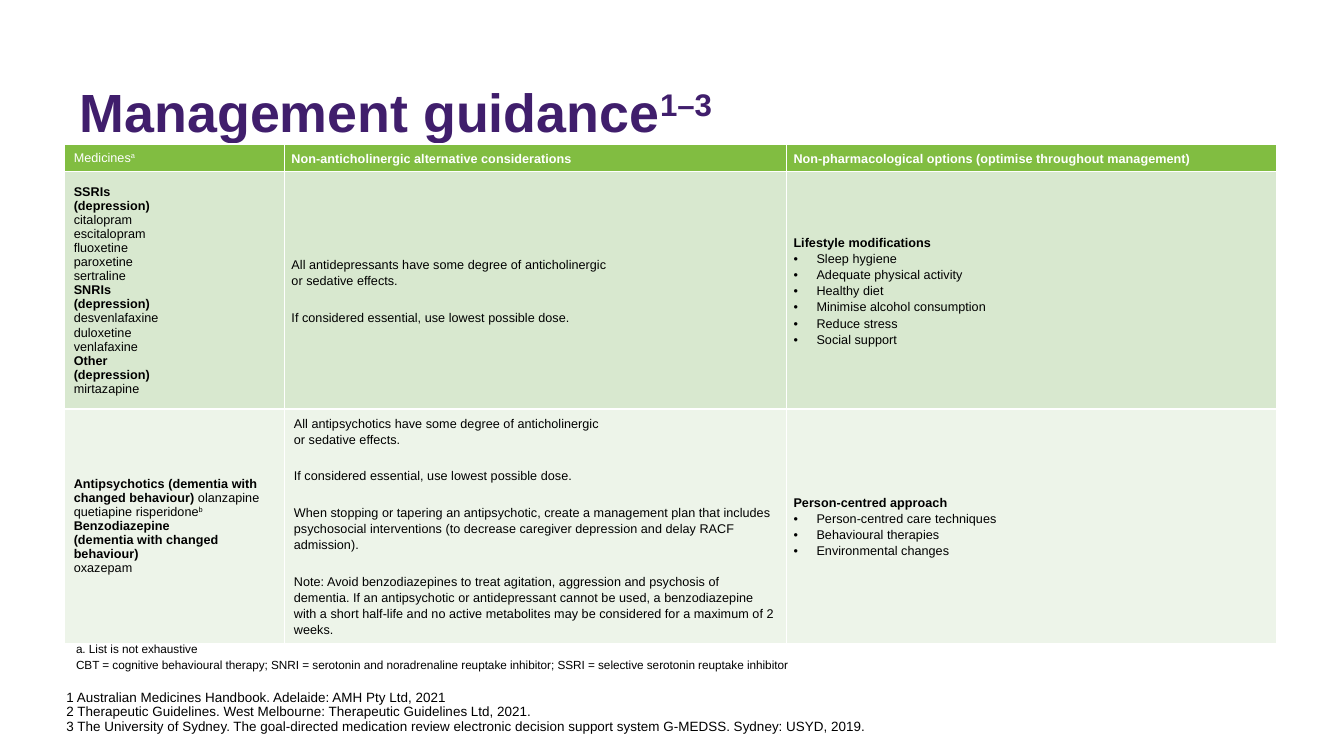
from dataclasses import dataclass

from lxml import etree
from pptx import Presentation
from pptx import util as u
from pptx.dml.color import RGBColor
from pptx.enum import text
from pptx.oxml.ns import qn


@dataclass(frozen=True)
class Theme:
    font: str = "Arial"
    purple: str = "401E6C"
    black: str = "000000"
    white: str = "FFFFFF"
    header_fill: str = "81BD41"
    row_fills: tuple = ("D8E8CF", "EDF4E9")
    title_size: float = 32
    reference_size: float = 8
    table_size: float = 7.5
    note_size: float = 7


THEME = Theme()
BOLD, SUPER = "bold", "super"
WIDE, NARROW, FLUSH = (0.08, 0.04), (0.06, 0), (0.08, 0)

COLUMN_WIDTHS = (1.82, 4.15, 4.05)
ROW_HEIGHTS = (0.23, 1.96, 1.92)

# A paragraph is plain text or a list of (text, style, ...) spans.
HEADERS = (
    [("Medicines",), ("a", SUPER)],
    [("Non-anticholinergic alternative considerations", BOLD)],
    [("Non-pharmacological options (optimise throughout management)", BOLD)],
)
DEPRESSION = {
    "SSRIs": ("citalopram", "escitalopram", "fluoxetine", "paroxetine", "sertraline"),
    "SNRIs": ("desvenlafaxine", "duloxetine", "venlafaxine"),
    "Other": ("mirtazapine",),
}
DEMENTIA_MEDICINES = (
    [("Antipsychotics (dementia with changed behaviour) ", BOLD),
     ("olanzapine quetiapine risperidone",), ("b", SUPER)],
    [("Benzodiazepine", BOLD)],
    [("(dementia with changed behaviour)", BOLD)],
    "oxazepam",
)
LOWEST_DOSE = "If considered essential, use lowest possible dose."
ANTIDEPRESSANT_ADVICE = (
    "All antidepressants have some degree of anticholinergic\vor sedative effects.",
    LOWEST_DOSE,
)
ANTIPSYCHOTIC_ADVICE = (
    "All antipsychotics have some degree of anticholinergic\vor sedative effects.",
    LOWEST_DOSE,
    "When stopping or tapering an antipsychotic, create a management plan that includes "
    "psychosocial interventions (to decrease caregiver depression and delay RACF admission).",
    "Note: Avoid benzodiazepines to treat agitation, aggression and psychosis of dementia. "
    "If an antipsychotic or antidepressant cannot be used, a benzodiazepine with a short "
    "half-life and no active metabolites may be considered for a maximum of 2 weeks.",
)
LIFESTYLE = ("Lifestyle modifications", "Sleep hygiene", "Adequate physical activity",
             "Healthy diet", "Minimise alcohol consumption", "Reduce stress", "Social support")
PERSON_CENTRED = ("Person-centred approach", "Person-centred care techniques",
                  "Behavioural therapies", "Environmental changes")
NOTES = (
    "a. List is not exhaustive",
    "CBT = cognitive behavioural therapy; SNRI = serotonin and noradrenaline reuptake "
    "inhibitor; SSRI = selective serotonin reuptake inhibitor",
)
REFERENCES = (
    "1 Australian Medicines Handbook. Adelaide: AMH Pty Ltd, 2021",
    "2 Therapeutic Guidelines. West Melbourne: Therapeutic Guidelines Ltd, 2021.",
    "3 The University of Sydney. The goal-directed medication review electronic decision "
    "support system G-MEDSS. Sydney: USYD, 2019.",
)


def add_bullet(para):
    properties = para._p.get_or_add_pPr()
    properties.set("marL", str(u.Inches(0.19)))
    properties.set("indent", str(-u.Inches(0.19)))
    etree.SubElement(properties, qn("a:buFont")).set("typeface", THEME.font)
    etree.SubElement(properties, qn("a:buChar")).set("char", "•")


def write_paragraph(para, content, size, color):
    spans = [(content,)] if isinstance(content, str) else content
    para.text = spans[0][0] if len(spans) == 1 else ""
    if len(spans) > 1:
        for span in spans:
            para.add_run().text = span[0]
    for index, run in enumerate(para.runs):
        styles = spans[min(index, len(spans) - 1)][1:]
        run.font.name = THEME.font
        run.font.size = u.Pt(size)
        run.font.bold = BOLD in styles
        run.font.color.rgb = RGBColor.from_string(color)
        if SUPER in styles:
            run.font._element.set("baseline", "30000")
    for line_break in para._p.findall(qn("a:br")):
        etree.SubElement(line_break, qn("a:rPr")).set("sz", str(int(size * 100)))


def write_paragraphs(frame, contents, size, color, line=1.0, gap=0, bulleted=False):
    """Fill a frame; gap falls between paragraphs only, bullets start at the second."""
    last = len(contents) - 1
    for index, content in enumerate(contents):
        para = frame.add_paragraph() if index else frame.paragraphs[0]
        para.alignment = text.PP_ALIGN.LEFT
        para.line_spacing = line
        para.space_before = u.Pt(gap if index else 0)
        para.space_after = u.Pt(gap if index < last else 0)
        if bulleted and index:
            add_bullet(para)
        write_paragraph(para, content, size, color)


def add_title(slide):
    title = slide.shapes.title
    title.left, title.top = u.Inches(0.56), u.Inches(0.25)
    title.width, title.height = u.Inches(8.82), u.Inches(0.99)
    frame = title.text_frame
    frame.auto_size = text.MSO_AUTO_SIZE.NONE
    frame.vertical_anchor = text.MSO_ANCHOR.BOTTOM
    heading = [("Management guidance", BOLD), ("1–3", BOLD, SUPER)]
    write_paragraphs(frame, [heading], THEME.title_size, THEME.purple, line=0.9)


def add_text(slide, left, top, width, height, contents, size, line):
    box = slide.shapes.add_textbox(*map(u.Inches, (left, top, width, height)))
    box.text_frame.word_wrap = True
    write_paragraphs(box.text_frame, contents, size, THEME.black, line)
    return box.text_frame


def add_borders(cell):
    properties = cell._tc.get_or_add_tcPr()
    for index, side in enumerate(("lnL", "lnR", "lnT", "lnB")):
        border = etree.Element(qn(f"a:{side}"), w=str(u.Pt(1)))
        fill = etree.SubElement(border, qn("a:solidFill"))
        etree.SubElement(fill, qn("a:srgbClr")).set("val", THEME.white)
        properties.insert(index, border)


def fill_cell(cell, contents, fill, margins, color=THEME.black, **spacing):
    side, edge = map(u.Inches, margins)
    cell.margin_left = cell.margin_right = side
    cell.margin_top = cell.margin_bottom = edge
    cell.vertical_anchor = text.MSO_ANCHOR.MIDDLE
    cell.fill.solid()
    cell.fill.fore_color.rgb = RGBColor.from_string(fill)
    add_borders(cell)
    write_paragraphs(cell.text_frame, contents, THEME.table_size, color, **spacing)


def depression_medicines():
    lines = []
    for group, medicines in DEPRESSION.items():
        lines += [[(group, BOLD)], [("(depression)", BOLD)], *medicines]
    return lines


def add_guidance_table(slide):
    frame = slide.shapes.add_table(
        len(ROW_HEIGHTS), len(COLUMN_WIDTHS), u.Inches(0.53), u.Inches(1.19),
        u.Inches(sum(COLUMN_WIDTHS)), u.Inches(sum(ROW_HEIGHTS)))
    table = frame.table
    for column, width in zip(table.columns, COLUMN_WIDTHS):
        column.width = u.Inches(width)
    for row, height in zip(table.rows, ROW_HEIGHTS):
        row.height = u.Inches(height)

    for column, header in enumerate(HEADERS):
        fill_cell(table.cell(0, column), [header], THEME.header_fill,
                  NARROW if column else WIDE, THEME.white, line=1.15 if column else 1.0)

    rows = (
        (depression_medicines(), ANTIDEPRESSANT_ADVICE, NARROW, LIFESTYLE),
        (DEMENTIA_MEDICINES, ANTIPSYCHOTIC_ADVICE, FLUSH, PERSON_CENTRED),
    )
    for row, (medicines, advice, advice_margins, options) in enumerate(rows, 1):
        fill = THEME.row_fills[row - 1]
        heading, *items = options
        fill_cell(table.cell(row, 0), medicines, fill, WIDE)
        fill_cell(table.cell(row, 1), advice, fill, advice_margins, line=1.15, gap=6)
        fill_cell(table.cell(row, 2), [[(heading, BOLD)], *items], fill, NARROW,
                  line=1.15, bulleted=True)


def add_references(slide):
    frame = add_text(slide, 0.55, 5.59, 7.97, 0.48, REFERENCES, THEME.reference_size, 0.9)
    frame.margin_left = frame.margin_right = frame.margin_top = frame.margin_bottom = 0
    frame.vertical_anchor = text.MSO_ANCHOR.BOTTOM


def main():
    deck = Presentation()
    deck.slide_width, deck.slide_height = u.Inches(11.11), u.Inches(6.25)
    slide = deck.slides.add_slide(deck.slide_layouts[5])
    add_title(slide)
    add_references(slide)
    add_guidance_table(slide)
    add_text(slide, 0.53, 5.24, 10.02, 0.36, NOTES, THEME.note_size, 1.15)
    deck.save("out.pptx")


if __name__ == "__main__":
    main()
